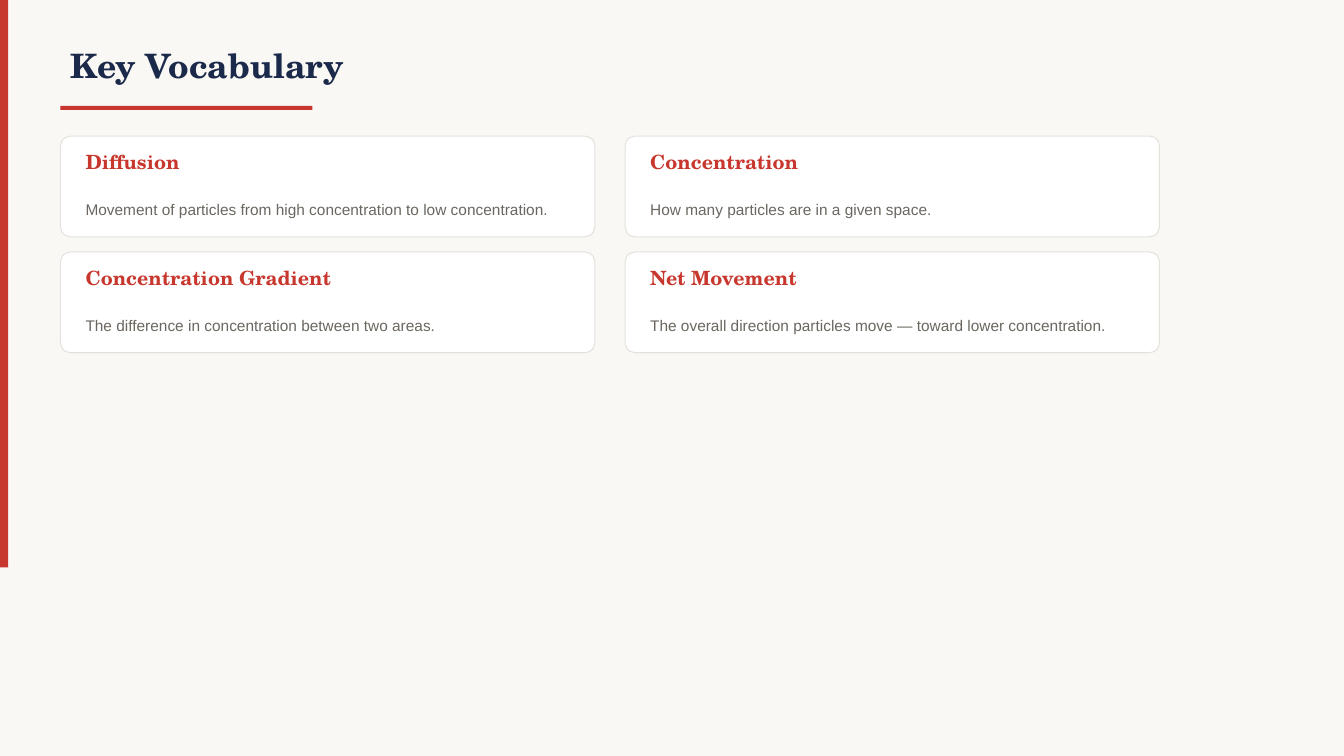
"""Build the Key Vocabulary slide: a heading above a two-column grid of term cards."""
from pptx import Presentation
from pptx.dml.color import RGBColor
from pptx.enum import shapes, text
from pptx.util import Inches, Pt

CREAM = RGBColor(0xFA, 0xF8, 0xF5)
RED = RGBColor(0xC8, 0x37, 0x2D)
NAVY = RGBColor(0x1B, 0x2A, 0x4A)
WHITE = RGBColor(0xFF, 0xFF, 0xFF)
BORDER = RGBColor(0xE5, 0xE2, 0xDC)
GREY = RGBColor(0x6B, 0x66, 0x60)
SERIF = "TeX Gyre Schola"
SANS = "Arial"

VOCABULARY = [
    ("Diffusion", "Movement of particles from high concentration to low concentration."),
    ("Concentration", "How many particles are in a given space."),
    ("Concentration Gradient", "The difference in concentration between two areas."),
    ("Net Movement", "The overall direction particles move — toward lower concentration."),
]

prs = Presentation()
prs.slide_width = Inches(13.33)
prs.slide_height = Inches(7.5)
slide = prs.slides.add_slide(prs.slide_layouts[6])
slide.background.fill.solid()
slide.background.fill.fore_color.rgb = CREAM


def add_block(preset, left, top, width, height, color):
    block = slide.shapes.add_shape(
        preset, Inches(left), Inches(top), Inches(width), Inches(height))
    block.shadow.inherit = False
    block.fill.solid()
    block.fill.fore_color.rgb = color
    block.line.fill.background()
    return block


def add_label(wording, left, top, width, height, font_name, size, color, bold):
    frame = slide.shapes.add_textbox(
        Inches(left), Inches(top), Inches(width), Inches(height)).text_frame
    frame.word_wrap = True
    frame.vertical_anchor = text.MSO_ANCHOR.MIDDLE
    frame.text = wording
    paragraph = frame.paragraphs[0]
    font = paragraph.runs[0].font
    font.name = font_name
    font.size = Pt(size)
    font.bold = bold
    font.color.rgb = color
    return paragraph


add_block(shapes.MSO_SHAPE.RECTANGLE, 0, 0, 0.08, 5.63, RED)
add_label("Key Vocabulary", 0.6, 0.3, 10, 0.7, SERIF, 24, NAVY, True)
add_block(shapes.MSO_SHAPE.RECTANGLE, 0.6, 1.05, 2.5, 0.04, RED)

for index, (term, meaning) in enumerate(VOCABULARY):
    row, column = divmod(index, 2)
    left = 0.6 + column * 5.6
    top = 1.35 + row * 1.15
    card = add_block(shapes.MSO_SHAPE.ROUNDED_RECTANGLE, left, top, 5.3, 1, WHITE)
    card.adjustments[0] = 0.1
    card.line.color.rgb = BORDER
    card.line.width = Pt(0.75)
    add_label(term, left + 0.15, top + 0.08, 5, 0.35, SERIF, 14, RED, True)
    definition = add_label(meaning, left + 0.15, top + 0.45, 5, 0.5, SANS, 11, GREY, False)
    definition.line_spacing = 1.3

prs.save("out.pptx")
